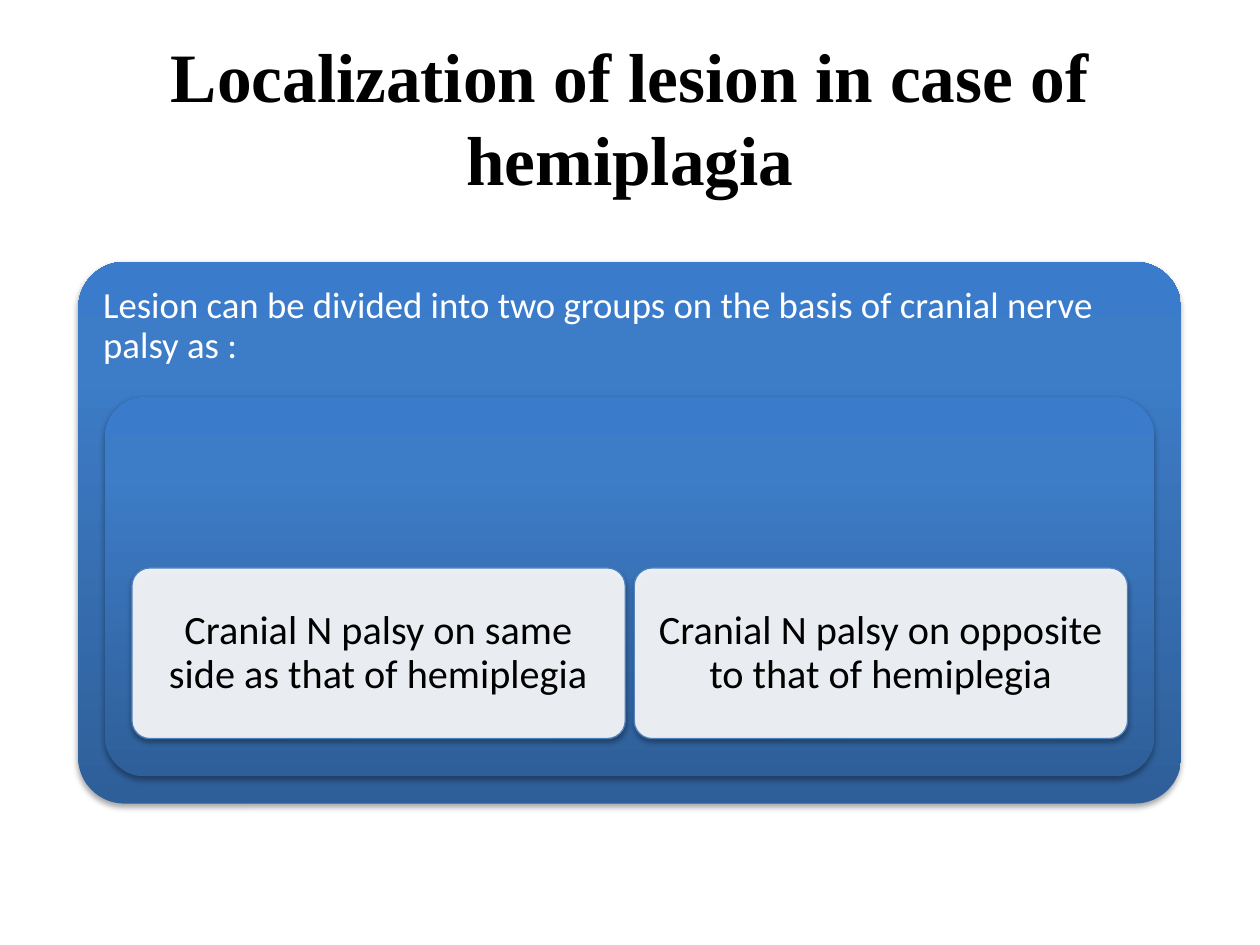
from copy import deepcopy
from dataclasses import dataclass

from lxml import etree
from pptx import Presentation
from pptx.dml.color import RGBColor
from pptx.enum.shapes import MSO_SHAPE
from pptx.enum.text import MSO_ANCHOR, PP_ALIGN
from pptx.oxml.ns import qn
from pptx.util import Cm, Pt

ROUND = MSO_SHAPE.ROUNDED_RECTANGLE
TOP, MIDDLE = MSO_ANCHOR.TOP, MSO_ANCHOR.MIDDLE
LEFT, CENTER = PP_ALIGN.LEFT, PP_ALIGN.CENTER


@dataclass(frozen=True)
class Theme:
    """Colours, fonts and type sizes of the slide."""
    black: str = "000000"
    white: str = "FFFFFF"
    edge: str = "4F81BD"
    blend: tuple = ((0, "2F5F99"), (0.8, "3D7CC7"), (1, "3A7CCB"))
    serif: str = "Times New Roman"
    sans: str = "Calibri"
    title: float = 39.6
    lead: float = 21
    card: float = 23


THEME = Theme()


def rgb(code):
    """Turn a hex code into a colour."""
    return RGBColor.from_string(code)


def add_tag(parent, tag, **attrs):
    """Add a drawing element with the given attributes."""
    values = {key: str(value) for key, value in attrs.items()}
    return etree.SubElement(parent, qn(tag), values)


def write(shape, text, size, color, font, align, anchor, pad, lines=None, bold=False):
    """Set the text of a shape in one style."""
    frame = shape.text_frame
    frame.word_wrap = True
    frame.vertical_anchor = anchor
    frame.margin_left = frame.margin_right = Cm(pad)
    frame.margin_top = frame.margin_bottom = Cm(pad)
    para = frame.paragraphs[0]
    para.text = text
    para.alignment = align
    para.line_spacing = lines
    para.font.size = Pt(size)
    para.font.name = font
    para.font.bold = bold
    para.font.color.rgb = rgb(color)


def add_round(slide, box, curve):
    """Add a rounded box with a soft shadow below it."""
    shape = slide.shapes.add_shape(ROUND, *map(Cm, box))
    shape.adjustments[0] = curve
    shape.shadow.inherit = False
    effects = shape._element.spPr.find(qn("a:effectLst"))
    shade = add_tag(effects, "a:outerShdw", blurRad=Pt(3.1), dist=Pt(1.8),
                    dir=5400000, rotWithShape=0)
    color = add_tag(shade, "a:srgbClr", val=THEME.black)
    add_tag(color, "a:alpha", val=35000)
    return shape


def add_panel(slide, box, curve):
    """Add a borderless rounded box with the blue blend, dark at the bottom."""
    shape = add_round(slide, box, curve)
    shape.line.fill.background()
    shape.fill.gradient()
    shape.fill.gradient_angle = 90
    stops = shape._element.spPr.find(qn("a:gradFill")).find(qn("a:gsLst"))
    stops.insert(1, deepcopy(stops[0]))
    for stop, (place, code) in zip(shape.fill.gradient_stops, THEME.blend):
        stop.position = place
        stop.color.rgb = rgb(code)
    return shape


def add_card(slide, box, text):
    """Add a pale, slightly clear card with centred text."""
    shape = add_round(slide, box, 0.105)
    shape.fill.solid()
    shape.fill.fore_color.rgb = rgb(THEME.white)
    color = shape._element.spPr.find(qn("a:solidFill")).find(qn("a:srgbClr"))
    add_tag(color, "a:alpha", val=90000)
    shape.line.color.rgb = rgb(THEME.edge)
    shape.line.width = Pt(0.75)
    write(shape, text, THEME.card, THEME.black, THEME.sans, CENTER, MIDDLE, 0.25, 0.9)


def add_title(slide, box, text):
    """Add the slide title."""
    shape = slide.shapes.add_textbox(*map(Cm, box))
    write(shape, text, THEME.title, THEME.black, THEME.serif, CENTER, MIDDLE, 0.25,
          bold=True)


def add_groups(slide, box, lead, cards):
    """Add the nested panels with a lead line and a row of cards."""
    left, top, width, height = box
    pad, gap = 0.54, 0.18
    outer = add_panel(slide, box, 0.085)
    write(outer, lead, THEME.lead, THEME.white, THEME.sans, LEFT, TOP, 0.23, 0.9)

    left, top = left + pad, top + height * 0.25
    width, height = width - 2 * pad, height * 0.7
    add_panel(slide, (left, top, width, height), 0.105)

    span = (width - 2 * pad - gap * (len(cards) - 1)) / len(cards)
    for i, text in enumerate(cards):
        spot = left + pad + i * (span + gap)
        add_card(slide, (spot, top + height * 0.45, span, height * 0.45), text)


def main():
    """Build and save the slide."""
    deck = Presentation()
    deck.slide_width, deck.slide_height = Cm(25.4), Cm(19.05)
    slide = deck.slides.add_slide(deck.slide_layouts[6])
    add_groups(
        slide, (1.58, 5.28, 22.23, 10.92),
        "Lesion can be divided into two groups on the basis of cranial nerve palsy as :",
        ("Cranial N palsy on same side as that of hemiplegia",
         "Cranial N palsy on opposite to that of hemiplegia"))
    add_title(slide, (1.27, 0.76, 22.86, 3.18),
              "Localization of lesion in case of hemiplagia")
    deck.save("out.pptx")


if __name__ == "__main__":
    main()
